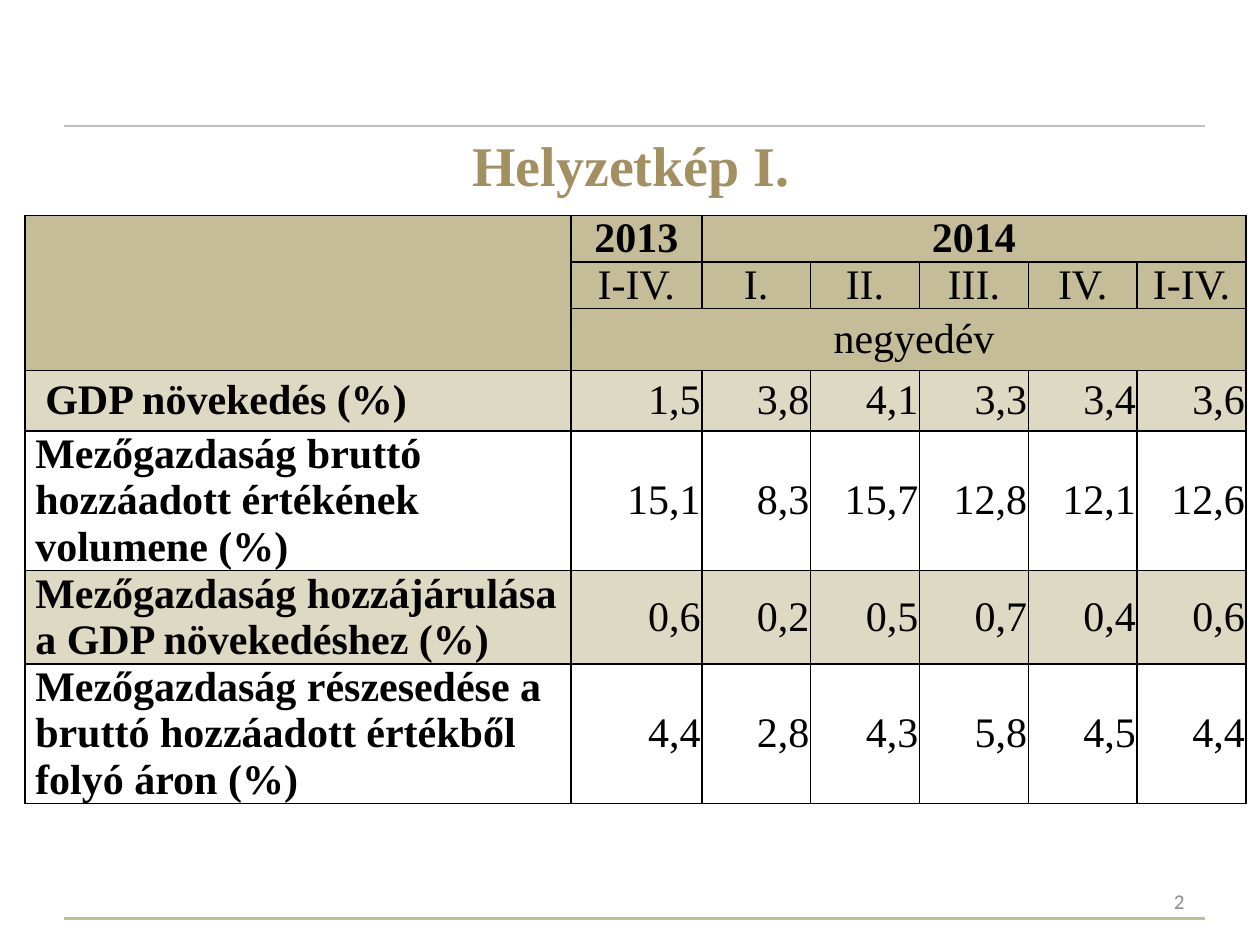
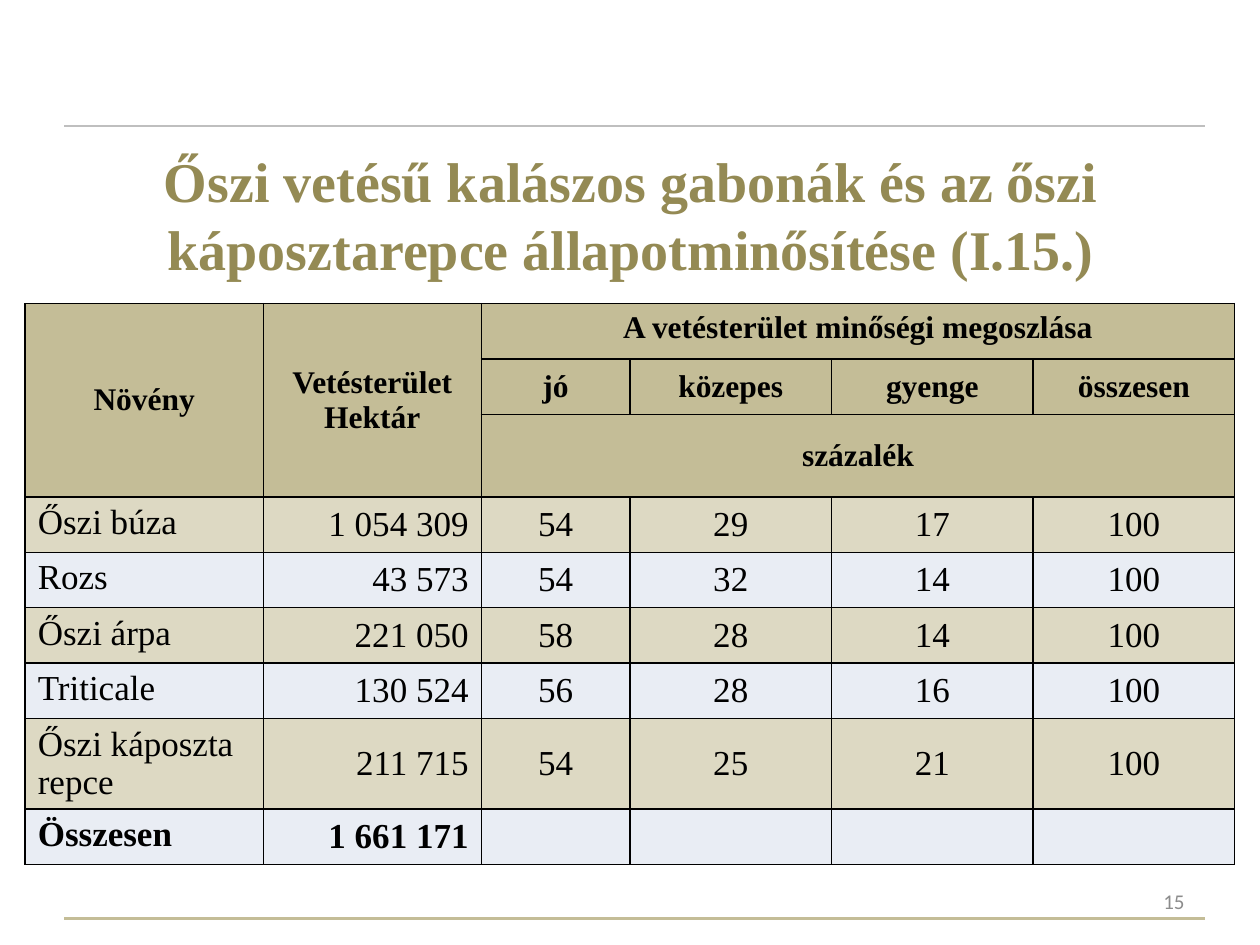
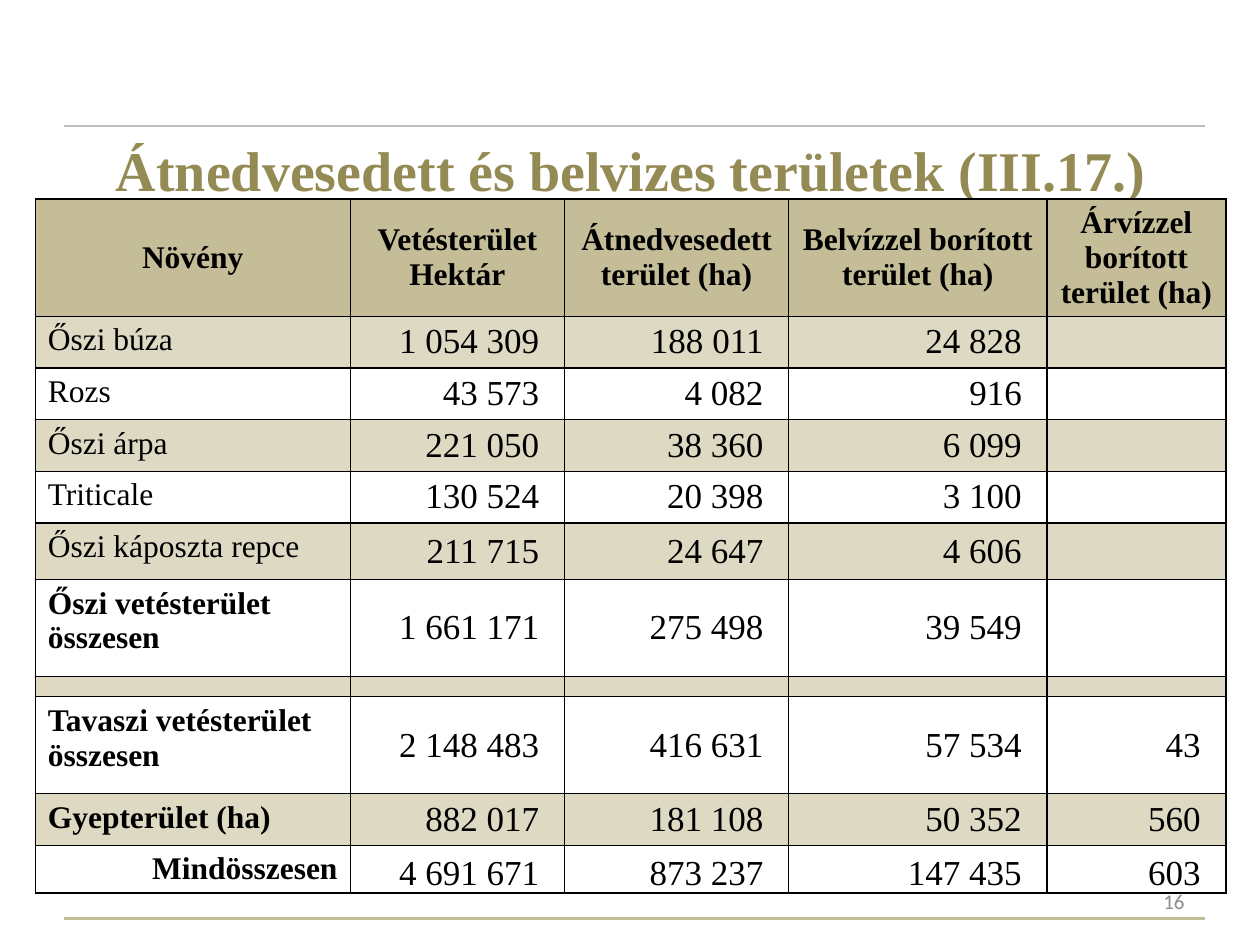
from lxml import etree
from pptx import Presentation
from pptx.dml.color import RGBColor
from pptx.enum.shapes import MSO_CONNECTOR
from pptx.enum.text import MSO_ANCHOR, MSO_AUTO_SIZE, PP_ALIGN
from pptx.oxml.ns import qn
from pptx.util import Inches, Pt

COLORS = {
    "head": "C4BD97",
    "band": "DDD9C3",
    "pale": "E9EDF4",
    "gold": "A29061",
    "olive": "948A54",
    "ink": "000000",
    "gray": "8C8C8C",
    "mist": "BFBFBF",
}
SERIF, SANS = "Times New Roman", "Calibri"
LEFT, CENTER, RIGHT = PP_ALIGN.LEFT, PP_ALIGN.CENTER, PP_ALIGN.RIGHT
TOP, MIDDLE, BOTTOM = MSO_ANCHOR.TOP, MSO_ANCHOR.MIDDLE, MSO_ANCHOR.BOTTOM
STRAIGHT = MSO_CONNECTOR.STRAIGHT
NO_FIT = MSO_AUTO_SIZE.NONE
TITLE_ONLY = 5
LEADING = 1.107  # line height of the serif font, in ems
PAD = (0.1, 0.05, 0.1, 0.05)
TIGHT = (0.01, 0, 0.01, 0)

GROWTH = [
    ["", "2013", "2014", "", "", "", ""],
    ["", "I-IV.", "I.", "II.", "III.", "IV.", "I-IV."],
    ["", "negyedév", "", "", "", "", ""],
    ["GDP növekedés (%)", "1,5", "3,8", "4,1", "3,3", "3,4", "3,6"],
    ["Mezőgazdaság bruttó hozzáadott értékének volumene (%)",
     "15,1", "8,3", "15,7", "12,8", "12,1", "12,6"],
    ["Mezőgazdaság hozzájárulása a GDP növekedéshez (%)",
     "0,6", "0,2", "0,5", "0,7", "0,4", "0,6"],
    ["Mezőgazdaság részesedése a bruttó hozzáadott értékből folyó áron (%)",
     "4,4", "2,8", "4,3", "5,8", "4,5", "4,4"],
]
QUALITY = [
    ["Növény", "Vetésterület\nHektár", "A vetésterület minőségi megoszlása", "", "", ""],
    ["", "", "jó", "közepes", "gyenge", "összesen"],
    ["", "", "százalék", "", "", ""],
    ["Őszi búza", "1 054 309", "54", "29", "17", "100"],
    ["Rozs", "43 573", "54", "32", "14", "100"],
    ["Őszi árpa", "221 050", "58", "28", "14", "100"],
    ["Triticale", "130 524", "56", "28", "16", "100"],
    ["Őszi káposzta repce", "211 715", "54", "25", "21", "100"],
    ["Összesen", "1 661 171", "", "", "", ""],
]
WATER = [
    ["Növény", "Vetésterület\nHektár", "Átnedvesedett terület (ha)",
     "Belvízzel borított terület (ha)", "Árvízzel borított terület (ha)"],
    ["Őszi búza", "1 054 309", "188 011", "24 828", ""],
    ["Rozs", "43 573", "4 082", "916", ""],
    ["Őszi árpa", "221 050", "38 360", "6 099", ""],
    ["Triticale", "130 524", "20 398", "3 100", ""],
    ["Őszi káposzta repce", "211 715", "24 647", "4 606", ""],
    ["Őszi vetésterület összesen", "1 661 171", "275 498", "39 549", ""],
    ["", "", "", "", ""],
    ["Tavaszi vetésterület összesen", "2 148 483", "416 631", "57 534", "43"],
    ["Gyepterület (ha)", "882 017", "181 108", "50 352", "560"],
    ["Mindösszesen", "4 691 671", "873 237", "147 435", "603"],
]


def rgb(name):
    return RGBColor.from_string(COLORS[name])


def set_text(frame, text, size, color, align, font=SERIF, bold=False):
    frame.text = text
    for para in frame.paragraphs:
        para.alignment = align
        for run in para.runs:
            run.font.size = Pt(size)
            run.font.name = font
            run.font.bold = bold
            run.font.color.rgb = rgb(color)


def add_rule(slide, y, color, width):
    rule = slide.shapes.add_connector(
        STRAIGHT, Inches(0.51), Inches(y), Inches(9.56), Inches(y))
    rule.line.color.rgb = rgb(color)
    rule.line.width = Pt(width)
    etree.SubElement(rule._element.spPr, qn("a:effectLst"))


def add_page(deck, title, top, height, color, number):
    """Add a slide with its title, two rules and page number."""
    slide = deck.slides.add_slide(deck.slide_layouts[TITLE_ONLY])
    add_rule(slide, 7.29, "head", 1.25)
    add_rule(slide, 1, "mist", 0.75)
    head = slide.shapes.title
    head.left, head.top = Inches(0.51), Inches(top)
    head.width, head.height = Inches(9), Inches(height)
    frame = head.text_frame
    set_text(frame, title, 32, color, CENTER, bold=True)
    frame.auto_size = NO_FIT
    frame.word_wrap = True
    frame.vertical_anchor = MIDDLE
    box = slide.shapes.add_textbox(
        Inches(7.17), Inches(6.95), Inches(2.33), Inches(0.4))
    box.text_frame.word_wrap = True
    box.text_frame.vertical_anchor = MIDDLE
    set_text(box.text_frame, str(number), 12, "gray", RIGHT, SANS)
    return slide


def add_edges(cell):
    props = cell._tc.get_or_add_tcPr()
    for side in ("lnL", "lnR", "lnT", "lnB"):
        line = etree.SubElement(props, qn("a:" + side), w=str(Pt(1)))
        fill = etree.SubElement(line, qn("a:solidFill"))
        etree.SubElement(fill, qn("a:srgbClr"), val=COLORS["ink"])


def set_cell(cell, text, fill, size, bold=False, align=CENTER, anchor=MIDDLE, pad=PAD):
    add_edges(cell)
    if fill:
        cell.fill.solid()
        cell.fill.fore_color.rgb = rgb(fill)
    else:
        cell.fill.background()
    if text:
        set_text(cell.text_frame, text, size, "ink", align, bold=bold)
        for para in cell.text_frame.paragraphs:
            para.line_spacing = Pt(size * LEADING)
    else:
        pad = TIGHT
        para = cell.text_frame.paragraphs[0]._p
        etree.SubElement(para, qn("a:endParaRPr"), sz="600")
    cell.vertical_anchor = anchor
    (cell.margin_left, cell.margin_top,
     cell.margin_right, cell.margin_bottom) = map(Inches, pad)


def add_grid(slide, left, top, cols, rows, data, style, spans=()):
    """Add a table; style(row, col) gives the options of each cell."""
    grid = slide.shapes.add_table(
        len(rows), len(cols), Inches(left), Inches(top),
        Inches(sum(cols)), Inches(sum(rows))).table
    grid.first_row = grid.horz_banding = False
    for col, width in zip(grid.columns, cols):
        col.width = Inches(width)
    for row, height in zip(grid.rows, rows):
        row.height = Inches(height)
    for r, texts in enumerate(data):
        for c, text in enumerate(texts):
            set_cell(grid.cell(r, c), text, **style(r, c))
    for first, last in spans:
        grid.cell(*first).merge(grid.cell(*last))


def growth_style(r, c):
    if r < 3:
        pad = (0.1, 0, 0.01, 0) if r == 2 else TIGHT
        return dict(fill="head", size=24, bold=r == 0, pad=pad)
    fill = "band" if r % 2 else None
    if c == 0:
        indent = 0.16 if r == 3 else 0.08
        return dict(fill=fill, size=24, bold=True, align=LEFT, pad=(indent, 0, 0.01, 0))
    return dict(fill=fill, size=24, align=RIGHT, pad=TIGHT)


def quality_style(r, c):
    if r < 3:
        anchor = TOP if (r, c) == (0, 2) else MIDDLE
        return dict(fill="head", size=18, bold=True, anchor=anchor)
    align = (LEFT, RIGHT)[c] if c < 2 else CENTER
    return dict(fill="band" if r % 2 else "pale", size=20, bold=r == 8,
                align=align, anchor=MIDDLE if c else TOP)


def water_style(r, c):
    if r == 0:
        return dict(fill="head", size=18, bold=True)
    fill = "band" if r % 2 else None
    last = r == len(WATER) - 1
    if c == 0:
        return dict(fill=fill, size=18, bold=r > 5,
                    align=RIGHT if last else LEFT, anchor=TOP)
    return dict(fill=fill, size=20, align=RIGHT,
                anchor=BOTTOM if last else MIDDLE,
                pad=(0.01, 0.01, 0.2, 0) if last else (0.1, 0.05, 0.2, 0.05))


def main():
    deck = Presentation()
    deck.slide_width, deck.slide_height = Inches(10), Inches(7.5)

    slide = add_page(deck, "Helyzetkép I.", 0.91, 0.79, "gold", 2)
    quarter = (9.69 - 4.33 - 1.04) / 5
    add_grid(slide, 0.2, 1.71, [4.33, 1.04] + [quarter] * 5,
             [0.37, 0.37, 0.49, 0.48, 1.11, 0.74, 1.11], GROWTH, growth_style,
             [((0, 0), (2, 0)), ((0, 2), (0, 6)), ((2, 1), (2, 6))])

    slide = add_page(
        deck, "Őszi vetésű kalászos gabonák és az őszi káposztarepce "
        "állapotminősítése (I.15.)", 1.23, 0.94, "olive", 15)
    add_grid(slide, 0.2, 2.41, [1.89, 1.73, 1.18] + [1.6] * 3,
             [0.44, 0.44, 0.65] + [0.44] * 4 + [0.72, 0.44], QUALITY, quality_style,
             [((0, 0), (2, 0)), ((0, 1), (2, 1)),
              ((0, 2), (0, 5)), ((2, 2), (2, 5))])

    slide = add_page(deck, "Átnedvesedett és belvizes területek (III.17.)",
                     1.07, 0.55, "olive", 16)
    add_grid(slide, 0.28, 1.58, [2.5, 1.7, 1.78, 2.05, 1.42],
             [0.93] + [0.41] * 4 + [0.45, 0.77, 0.16, 0.77, 0.41, 0.38],
             WATER, water_style)

    deck.save("out.pptx")


if __name__ == "__main__":
    main()
